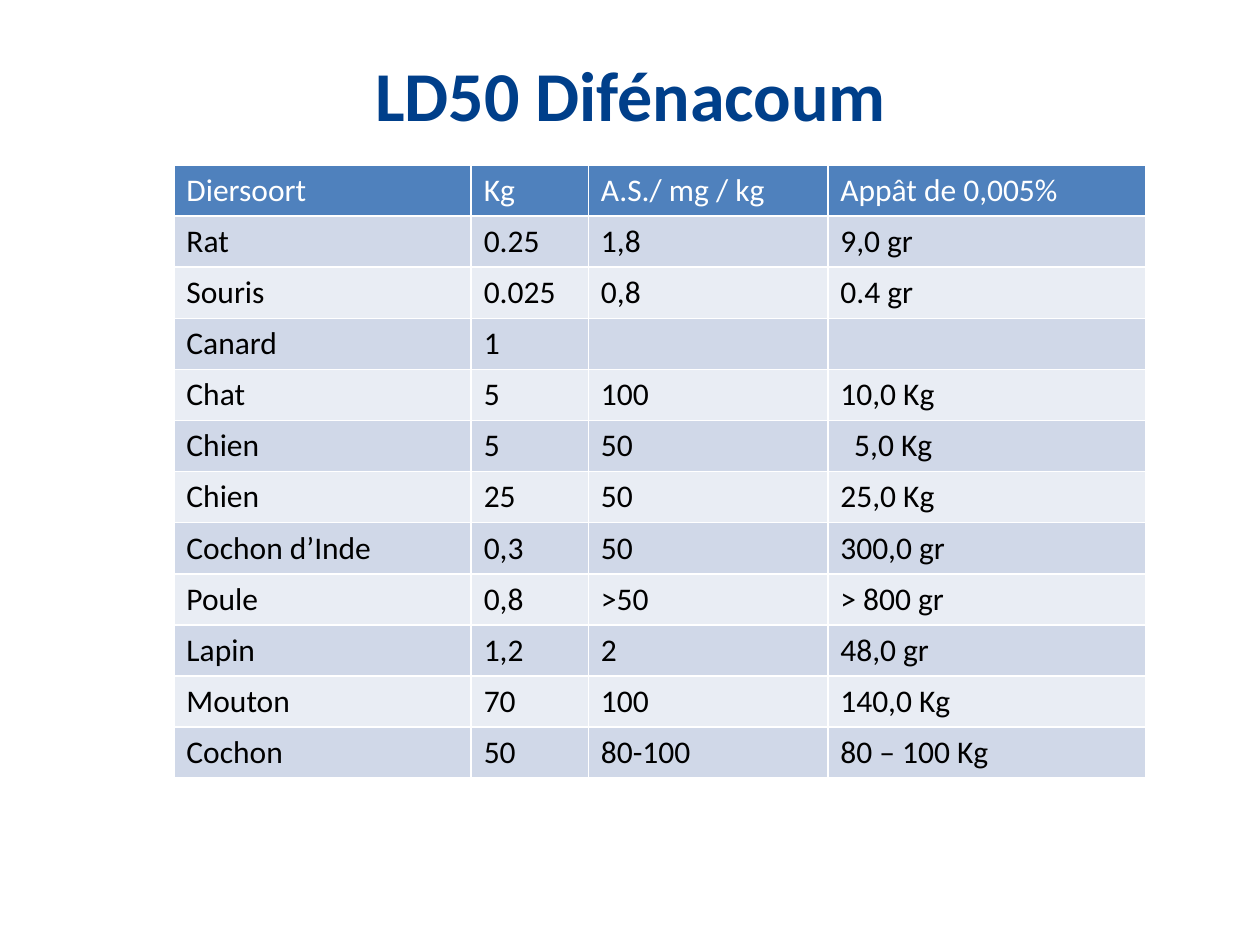
from dataclasses import dataclass

from pptx import Presentation
from pptx.dml.color import RGBColor
from pptx.enum import text
from pptx.util import Inches, Pt


@dataclass(frozen=True)
class Theme:
    font: str = "Calibri"
    title_size: int = 40
    table_size: int = 18
    title: str = "003F8A"
    header_fill: str = "4F81BD"
    header_text: str = "FFFFFF"
    body_text: str = "000000"
    bands: tuple = ("D0D8E8", "E9EDF4")


theme = Theme()


def add_run(paragraph, words, size, color, bold=False):
    run = paragraph.add_run()
    run.text = words
    run.font.name = theme.font
    run.font.size = Pt(size)
    run.font.bold = bold
    run.font.color.rgb = RGBColor.from_string(color)


prs = Presentation()
prs.slide_width, prs.slide_height = Inches(10), Inches(7.5)
slide = prs.slides.add_slide(prs.slide_layouts[5])

# Title
title = slide.shapes.title
title.left, title.top = Inches(0.23), Inches(0.36)
title.width, title.height = Inches(9.55), Inches(0.77)
title.text_frame.word_wrap = True
title.text_frame.auto_size = text.MSO_AUTO_SIZE.SHAPE_TO_FIT_TEXT
heading = title.text_frame.paragraphs[0]
heading.alignment = text.PP_ALIGN.CENTER
add_run(heading, "LD50 Difénacoum", theme.title_size, theme.title, bold=True)

# Lethal doses: species, body weight, active substance, bait
doses = [
    ("Diersoort", "Kg", "A.S./ mg / kg", "Appât de 0,005%"),
    ("Rat", "0.25", "1,8", "9,0 gr"),
    ("Souris", "0.025", "0,8", "0.4 gr"),
    ("Canard", "1", "", ""),
    ("Chat", "5", "100", "10,0 Kg"),
    ("Chien", "5", "50", "5,0 Kg"),
    ("Chien", "25", "50", "25,0 Kg"),
    ("Cochon d’Inde", "0,3", "50", "300,0 gr"),
    ("Poule", "0,8", ">50", "> 800 gr"),
    ("Lapin", "1,2", "2", "48,0 gr"),
    ("Mouton", "70", "100", "140,0 Kg"),
    ("Cochon", "50", "80-100", "80 – 100 Kg"),
]
column_widths = [2.36, 0.93, 1.9, 2.52]

# The default table style draws the white cell borders
dose_table = slide.shapes.add_table(
    len(doses), len(column_widths),
    Inches(1.38), Inches(1.31), Inches(sum(column_widths)), Inches(4.87)).table
for column, width in zip(dose_table.columns, column_widths):
    column.width = Inches(width)

for r, dose in enumerate(doses):
    fill = theme.bands[(r - 1) % 2] if r else theme.header_fill
    color = theme.body_text if r else theme.header_text
    for c, words in enumerate(dose):
        cell = dose_table.cell(r, c)
        cell.fill.solid()
        cell.fill.fore_color.rgb = RGBColor.from_string(fill)
        if words:
            add_run(cell.text_frame.paragraphs[0], words, theme.table_size, color)

# Indent the single-digit dose under the two-digit ones
dose_table.cell(5, 3).margin_left = Inches(0.21)

prs.save("out.pptx")
